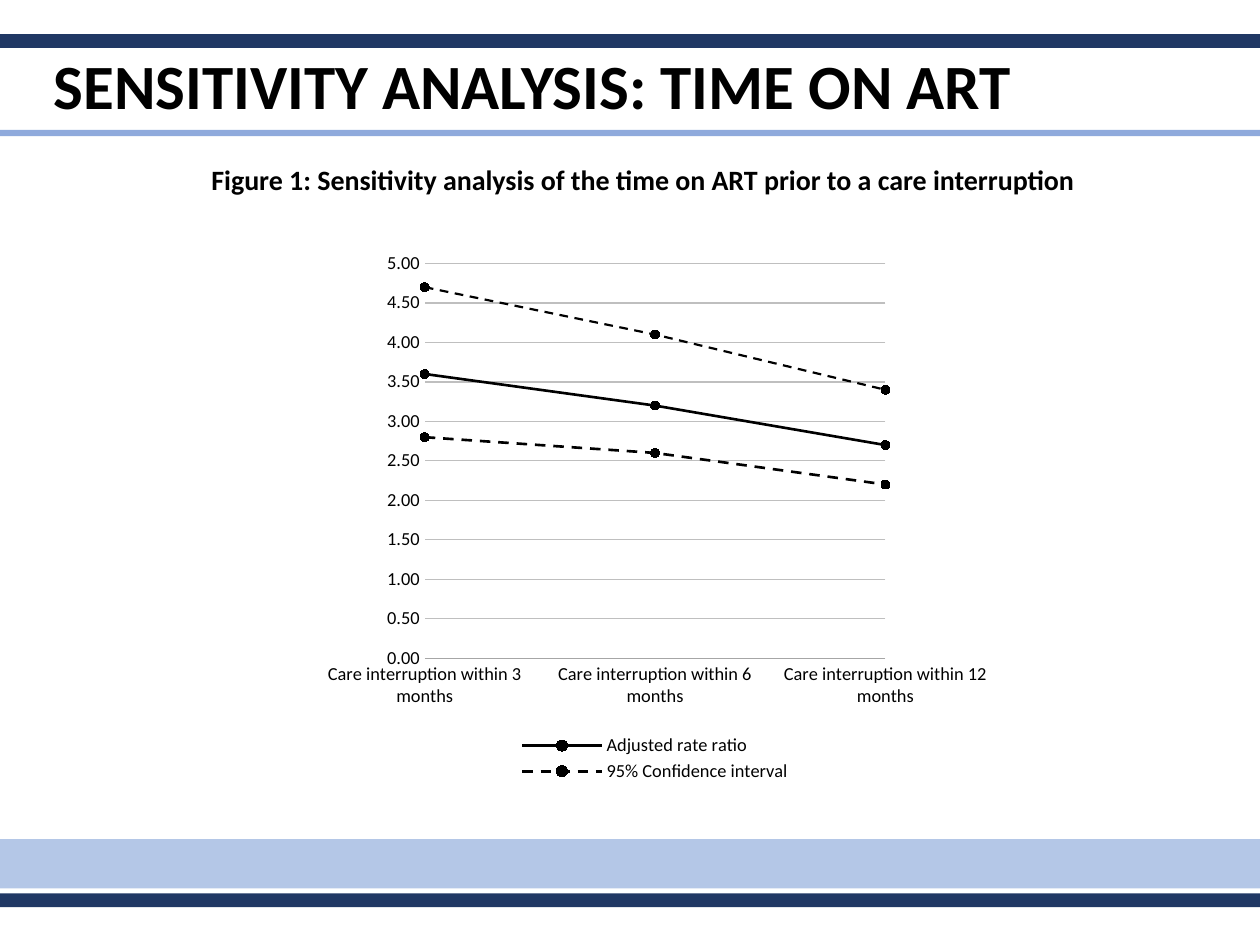
"""Build the slide on the sensitivity analysis of time on ART."""
from dataclasses import dataclass
from typing import Optional

from lxml import etree
from pptx import Presentation
from pptx.chart.data import CategoryChartData
from pptx.dml.color import RGBColor
from pptx.enum.chart import XL_CHART_TYPE, XL_LEGEND_POSITION, XL_MARKER_STYLE, XL_TICK_MARK
from pptx.enum.dml import MSO_LINE
from pptx.enum.shapes import MSO_SHAPE
from pptx.enum.text import MSO_ANCHOR
from pptx.oxml.ns import qn
from pptx.util import Inches, Length, Pt

LINE_MARKERS = XL_CHART_TYPE.LINE_MARKERS
BOTTOM = XL_LEGEND_POSITION.BOTTOM
CIRCLE = XL_MARKER_STYLE.CIRCLE
NO_TICK = XL_TICK_MARK.NONE
DASH = MSO_LINE.DASH
RECT = MSO_SHAPE.RECTANGLE
MIDDLE, TOP = MSO_ANCHOR.MIDDLE, MSO_ANCHOR.TOP

BLACK = RGBColor(0x00, 0x00, 0x00)
NAVY = RGBColor(0x20, 0x38, 0x64)
BLUE = RGBColor(0x8F, 0xAA, 0xDC)
PALE = RGBColor(0xB4, 0xC7, 0xE7)
AXIS_GREY = RGBColor(0xA6, 0xA6, 0xA6)
GRID_GREY = RGBColor(0xBF, 0xBF, 0xBF)

FONT = "Calibri"
COLS, ROWS = 100, 75
UNIT = Inches(10) // COLS


@dataclass(frozen=True)
class Box:
    """A place on the grid, in columns and rows."""
    col: float
    row: float
    cols: float
    rows: float

    def emu(self) -> list[Length]:
        """Return left, top, width and height."""
        return [Length(round(n * UNIT)) for n in (self.col, self.row, self.cols, self.rows)]


@dataclass(frozen=True)
class Band:
    """A full-width stripe."""
    row: float
    rows: float
    color: RGBColor


@dataclass(frozen=True)
class Line:
    """A chart series and its stroke."""
    name: str
    values: tuple[float, ...]
    width: float = 1.5
    dash: Optional[MSO_LINE] = None


BANDS = (Band(66.6, 3.9, PALE), Band(70.9, 1.1, NAVY),
         Band(2.7, 1.1, NAVY), Band(10.3, 0.5, BLUE))
CATEGORIES = [f"Care interruption within {n} months" for n in (3, 6, 12)]
LINES = (
    Line("Adjusted rate ratio", (3.6, 3.2, 2.7)),
    Line("95% Confidence interval", (2.8, 2.6, 2.2), dash=DASH),
    Line("", (4.7, 4.1, 3.4), 1.25, DASH),
)


def add_band(slide, band: Band) -> None:
    """Draw one stripe across the slide."""
    sp = slide.shapes.add_shape(RECT, *Box(0, band.row, COLS, band.rows).emu())
    sp.shadow.inherit = False
    sp.fill.solid()
    sp.fill.fore_color.rgb = band.color
    sp.line.fill.background()


def style_font(font, size: float, bold: bool = False) -> None:
    """Set the common font with a size and weight."""
    font.name, font.size, font.bold = FONT, Pt(size), bold
    font.color.rgb = BLACK


def add_text(slide, text: str, box: Box, *, size: float, anchor=TOP,
             spacing: float = 1.0) -> None:
    """Write one bold line of text."""
    tf = slide.shapes.add_textbox(*box.emu()).text_frame
    tf.word_wrap = True
    tf.vertical_anchor = anchor
    p = tf.paragraphs[0]
    p.line_spacing = spacing
    r = p.add_run()
    r.text = text
    style_font(r.font, size, bold=True)


def sub(parent, tag: str, val: object) -> None:
    """Append a chart element that holds a value."""
    etree.SubElement(parent, qn(f"c:{tag}"), val=str(val))


def set_layout(parent, index: int, x: float, y: float, w: float, h: float,
               inner: bool = False) -> None:
    """Place a chart part by shares of the chart's size."""
    for old in parent.findall(qn("c:layout")):
        parent.remove(old)
    layout = etree.Element(qn("c:layout"))
    manual = etree.SubElement(layout, qn("c:manualLayout"))
    if inner:
        sub(manual, "layoutTarget", "inner")
    for tag in ("xMode", "yMode"):
        sub(manual, tag, "edge")
    for tag, val in zip("xywh", (x, y, w, h)):
        sub(manual, tag, val)
    parent.insert(index, layout)


def cross_at_points(plot_area) -> None:
    """Let the value axis cross at the first category's point."""
    val_ax = plot_area.find(qn("c:valAx"))
    for old in val_ax.findall(qn("c:crossBetween")):
        val_ax.remove(old)
    between = etree.Element(qn("c:crossBetween"), val="midCat")
    val_ax.find(qn("c:crosses")).addnext(between)


def style_axis(axis) -> None:
    """Set tick marks and label font of an axis."""
    axis.major_tick_mark = axis.minor_tick_mark = NO_TICK
    style_font(axis.tick_labels.font, 10.5)


def style_stroke(line, color: RGBColor, width: float) -> None:
    """Set the colour and width of a line."""
    line.color.rgb = color
    line.width = Pt(width)


def style_series(series, line: Line) -> None:
    """Draw a series as a black line with round markers."""
    series.smooth = False
    style_stroke(series.format.line, BLACK, line.width)
    if line.dash:
        series.format.line.dash_style = line.dash
    series.marker.style, series.marker.size = CIRCLE, 5
    series.marker.format.fill.solid()
    series.marker.format.fill.fore_color.rgb = BLACK
    style_stroke(series.marker.format.line, BLACK, 0.75)


def add_legend(chart) -> None:
    """Put the legend below, without the unnamed series."""
    chart.has_legend = True
    legend = chart.legend
    legend.position = BOTTOM
    legend.include_in_layout = False
    style_font(legend.font, 10.5)
    root = chart.element.find(".//" + qn("c:legend"))
    entry = etree.Element(qn("c:legendEntry"))
    sub(entry, "idx", len(LINES) - 1)
    sub(entry, "delete", 1)
    root.insert(1, entry)
    set_layout(root, 2, 0.28, 0.87, 0.4, 0.09)


def add_line_chart(slide, box: Box) -> None:
    """Add the chart of rate ratios with their interval."""
    data = CategoryChartData(number_format="0.00")
    data.categories = CATEGORIES
    for line in LINES:
        data.add_series(line.name, line.values)
    chart = slide.shapes.add_chart(LINE_MARKERS, *box.emu(), data).chart
    style_font(chart.font, 10)
    chart.has_title = False
    chart.plots[0].vary_by_categories = False
    for series, line in zip(chart.plots[0].series, LINES):
        style_series(series, line)

    cat, val = chart.category_axis, chart.value_axis
    style_axis(cat)
    style_axis(val)
    style_stroke(cat.format.line, AXIS_GREY, 0.75)
    val.format.line.fill.background()
    val.minimum_scale, val.maximum_scale, val.major_unit = 0, 5, 0.5
    val.tick_labels.number_format = "0.00"
    val.tick_labels.number_format_is_linked = False
    val.has_major_gridlines = True
    style_stroke(val.major_gridlines.format.line, GRID_GREY, 0.75)

    plot_area = chart.element.find(".//" + qn("c:plotArea"))
    cross_at_points(plot_area)
    set_layout(plot_area, 0, 0.15, 0.1, 0.66, 0.65, inner=True)
    add_legend(chart)


prs = Presentation()
prs.slide_width, prs.slide_height = COLS * UNIT, ROWS * UNIT
s = prs.slides.add_slide(prs.slide_layouts[6])
for stripe in BANDS:
    add_band(s, stripe)
add_text(s, "SENSITIVITY ANALYSIS: TIME ON ART", Box(3.3, 4.1, 105.4, 5.9),
         size=36, anchor=MIDDLE, spacing=0.9)
add_text(s, "Figure 1: Sensitivity analysis of the time on ART prior to a care interruption",
         Box(15.8, 12.4, 73.3, 3.7), size=16)
add_line_chart(s, Box(25.4, 16.1, 55.4, 48.2))
prs.save("out.pptx")
